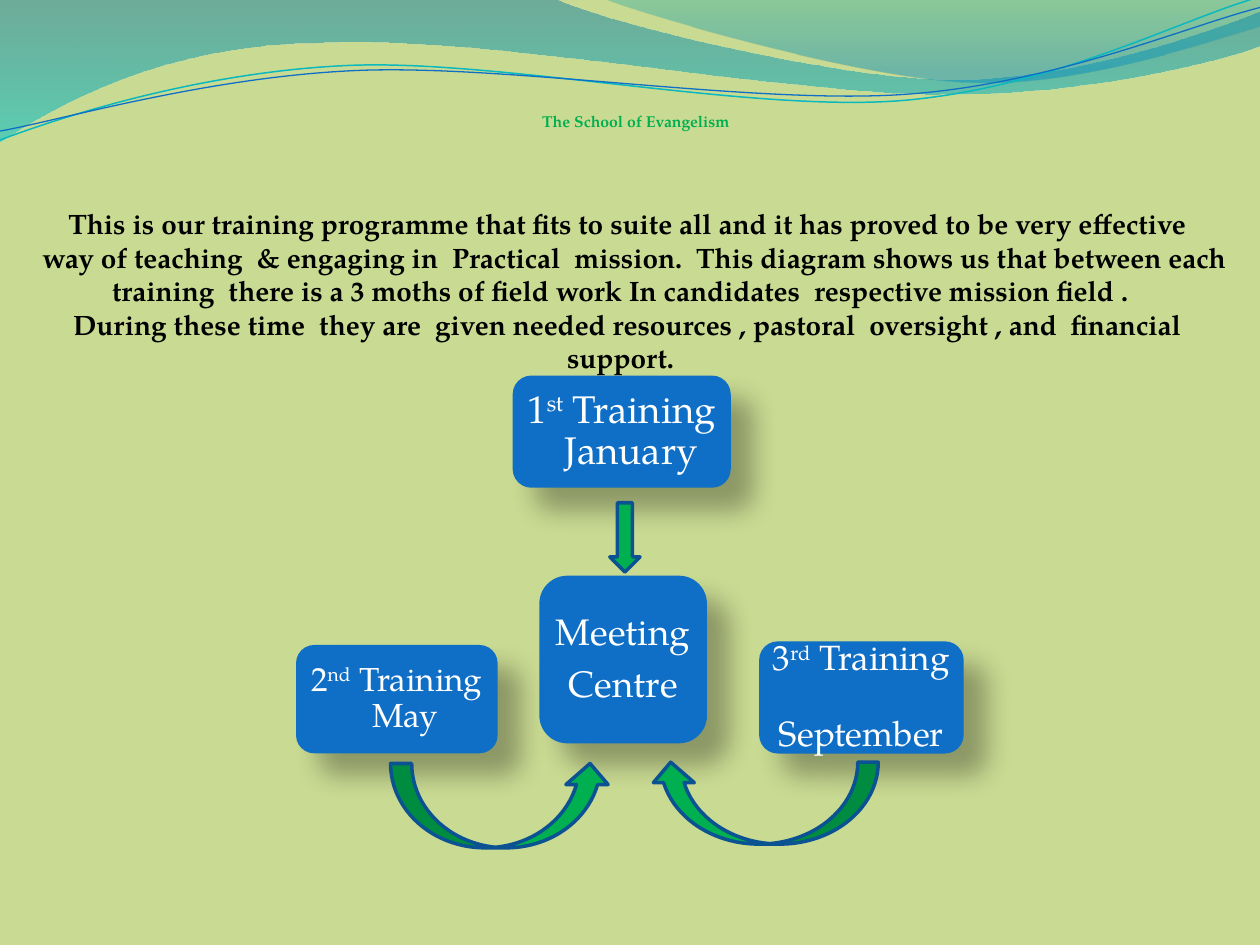
import copy
import math

import pptx
import pptx.dml.color
import pptx.enum.shapes
import pptx.enum.text
import pptx.oxml
import pptx.oxml.ns
import pptx.util
from lxml import etree

Pt = pptx.util.Pt
RGBColor = pptx.dml.color.RGBColor
Shapes = pptx.enum.shapes.MSO_SHAPE
Anchor = pptx.enum.text.MSO_ANCHOR
CENTER = pptx.enum.text.PP_ALIGN.CENTER
qn = pptx.oxml.ns.qn

FONT = "TeX Gyre Pagella"
SAND = RGBColor(0xC9, 0xDA, 0x92)
BLUE = RGBColor(0x0F, 0x6F, 0xC6)
NAVY = RGBColor(0x0B, 0x52, 0x92)
GREEN = RGBColor(0x00, 0xB0, 0x50)
CYAN = RGBColor(0x0A, 0xB8, 0xBF)
WHITE = RGBColor(0xFF, 0xFF, 0xFF)
BLACK = RGBColor(0, 0, 0)

TITLE = ["The School of Evangelism"]
INTRO = [
    "This is our training programme that fits to suite all and it has proved to be very effective",
    "  way of teaching  & engaging in  Practical  mission.  This diagram shows us that between each "
    "training  there is a 3 moths of field work In candidates  respective mission field .  ",
    "During these time  they are  given needed resources , pastoral  oversight , and  financial support.  ",
]

WAVES = [
    ([(0, -0.7), (317, -0.7), (343, 12.2, 478, 45.4, 546, 45.4), (614, 45.4, 690, 18.7, 720, 6.5),
      (720.7, 26), (708, 31.7, 626, 54.7, 537, 54), (448, 54, 275, 20.2, 185, 24.5),
      (93, 25.2, 33, 59.8, -0.7, 81.4)],
     [(0, RGBColor(0x00, 0x74, 0xA1), 45), (1, RGBColor(0x00, 0xC6, 0xCF), 55)]),
    ([(345, -0.7), (366, 8, 491, 44.6, 554, 46.8), (616, 49.7, 692, 23, 720, 15), (720, 0)],
     [(0, RGBColor(0x00, 0xA1, 0xA9), 30), (0.8, RGBColor(0x00, 0x8B, 0xBF), 45)]),
]
STRANDS = [
    ([(0, 80), (34.6, 67, 114, 41, 199.4, 37.4), (284.4, 33.8, 427, 64, 513.4, 57.6),
      (600, 51, 675.4, 10.8, 718.6, -1.4)], (359.3, 41.4), CYAN, 0.85),
    ([(0, 74.9), (33.8, 69, 118, 44, 203.8, 40.3), (290, 36.7, 430, 59.8, 516.2, 54),
      (602, 48.2, 677.5, 15.1, 720, 4.3)], (359.6, 42.5), BLUE, 0.75),
]
STRAND_ROTATION = 357.3

STAGES = [
    ((308.2, 329, 95.8, 95.8), 21, [["Meeting"], ["Centre"]]),
    ((293, 214.6, 124.6, 64.1), 22, [["1", "^st", " Training", "\n", "  January"]]),
    ((169.2, 368.6, 115.2, 61.9), 19, [["2", "^nd", " Training", "\n", "  May"]]),
    ((433.8, 366.5, 116.9, 64.1), 20, [["3", "^rd", " Training", "\n", "  September"]]),
]
ARROWS = [
    (Shapes.CURVED_LEFT_ARROW, (413.3, 393.8, 46.8, 130.3), 90),
    (Shapes.CURVED_UP_ARROW, (223.2, 436.3, 126, 48.2), 0),
    (Shapes.DOWN_ARROW, (348.5, 287.3, 17.3, 39.6), 0),
]


def turn(part, center, degrees):
    cos, sin = math.cos(math.radians(degrees)), math.sin(math.radians(degrees))
    cx, cy = center
    turned = []
    for x, y in zip(part[::2], part[1::2]):
        turned += [cx + (x - cx) * cos - (y - cy) * sin, cy + (x - cx) * sin + (y - cy) * cos]
    return turned


def add_curve(page, parts, close):
    points = [(Pt(x), Pt(y)) for part in parts for x, y in zip(part[::2], part[1::2])]
    builder = page.shapes.build_freeform(*points[0], scale=1.0)
    builder.add_line_segments(points[1:], close=close)
    curve = builder.convert_to_shape()
    curve.shadow.inherit = False
    segments = iter(list(curve._element.spPr.iter(qn("a:lnTo"))))
    for part in parts[1:]:
        first = next(segments)
        if len(part) == 6:
            first.tag = qn("a:cubicBezTo")
            for segment in (next(segments), next(segments)):
                first.append(segment[0])
                segment.getparent().remove(segment)
    return curve


def add_wave(page, parts, stops):
    wave = add_curve(page, parts, True)
    wave.line.fill.background()
    wave.fill.gradient()
    wave.fill.gradient_angle = 270
    for stop, (position, color, opacity) in zip(wave.fill.gradient_stops, stops):
        stop.position = position
        stop.color.rgb = color
    for node, (position, color, opacity) in zip(wave._element.spPr.iter(qn("a:srgbClr")), stops):
        etree.SubElement(node, qn("a:alpha")).set("val", str(opacity * 1000))


def add_strand(page, parts, center, color, width):
    strand = add_curve(page, [turn(part, center, 360 - STRAND_ROTATION) for part in parts], False)
    strand.rotation = STRAND_ROTATION
    strand.fill.background()
    strand.line.color.rgb = color
    strand.line.width = Pt(width)


def add_preset(page, kind, place, color):
    shape = page.shapes.add_shape(kind, *map(Pt, place))
    shape.shadow.inherit = False
    shape.fill.solid()
    shape.fill.fore_color.rgb = color
    return shape


def style(font, size, color, bold=False):
    font.name, font.size, font.bold = FONT, Pt(size), bold
    font.color.rgb = color


def cast_shadow(shape):
    effects = shape._element.spPr.find(qn("a:effectLst"))
    effects.append(pptx.oxml.parse_xml(
        f'<a:outerShdw {pptx.oxml.ns.nsdecls("a")} blurRad="{Pt(15)}" dist="{Pt(18)}" '
        'dir="2700000" algn="tl" rotWithShape="0">'
        '<a:srgbClr val="000000"><a:alpha val="30000"/></a:srgbClr></a:outerShdw>'))


def add_stage(page, place, size, lines):
    stage = add_preset(page, Shapes.ROUNDED_RECTANGLE, place, BLUE)
    stage.line.fill.background()
    cast_shadow(stage)
    frame = stage.text_frame
    frame.word_wrap = True
    frame.vertical_anchor = Anchor.MIDDLE
    frame.margin_left = frame.margin_right = frame.margin_top = frame.margin_bottom = Pt(size * 0.2)
    for index, parts in enumerate(lines):
        para = frame.add_paragraph() if index else frame.paragraphs[0]
        para.alignment = CENTER
        para.line_spacing = 0.9
        para.space_after = Pt(size * 0.35)
        for part in parts:
            if part == "\n":
                para.add_line_break()
                para._p[-1].append(copy.deepcopy(span._r.rPr))
                continue
            span = para.add_run()
            span.text = part.lstrip("^")
            style(span.font, size, WHITE)
            if part.startswith("^"):
                span._r.rPr.set("baseline", "30000")


def add_text(page, place, lines, size, color, wrap):
    box = page.shapes.add_textbox(*map(Pt, place))
    box.text_frame.text = "\n".join(lines)
    box.text_frame.word_wrap = wrap
    for para in box.text_frame.paragraphs:
        para.alignment = CENTER
        style(para.runs[0].font, size, color, True)


def main():
    deck = pptx.Presentation()
    deck.slide_width, deck.slide_height = Pt(720), Pt(540)
    page = deck.slides.add_slide(deck.slide_layouts[6])
    page.background.fill.solid()
    page.background.fill.fore_color.rgb = SAND
    for wave in WAVES:
        add_wave(page, *wave)
    for strand in STRANDS:
        add_strand(page, *strand)
    for stage in STAGES:
        add_stage(page, *stage)
    for kind, place, rotation in ARROWS:
        arrow = add_preset(page, kind, place, GREEN)
        arrow.rotation = rotation
        arrow.line.color.rgb = NAVY
        arrow.line.width = Pt(2)
    add_text(page, (5.8, 114.5, 705.6, 104.4), INTRO, 16, BLACK, True)
    add_text(page, (88.6, 60.5, 549.4, 56.9), TITLE, 9, GREEN, False)
    deck.save("out.pptx")


if __name__ == "__main__":
    main()
